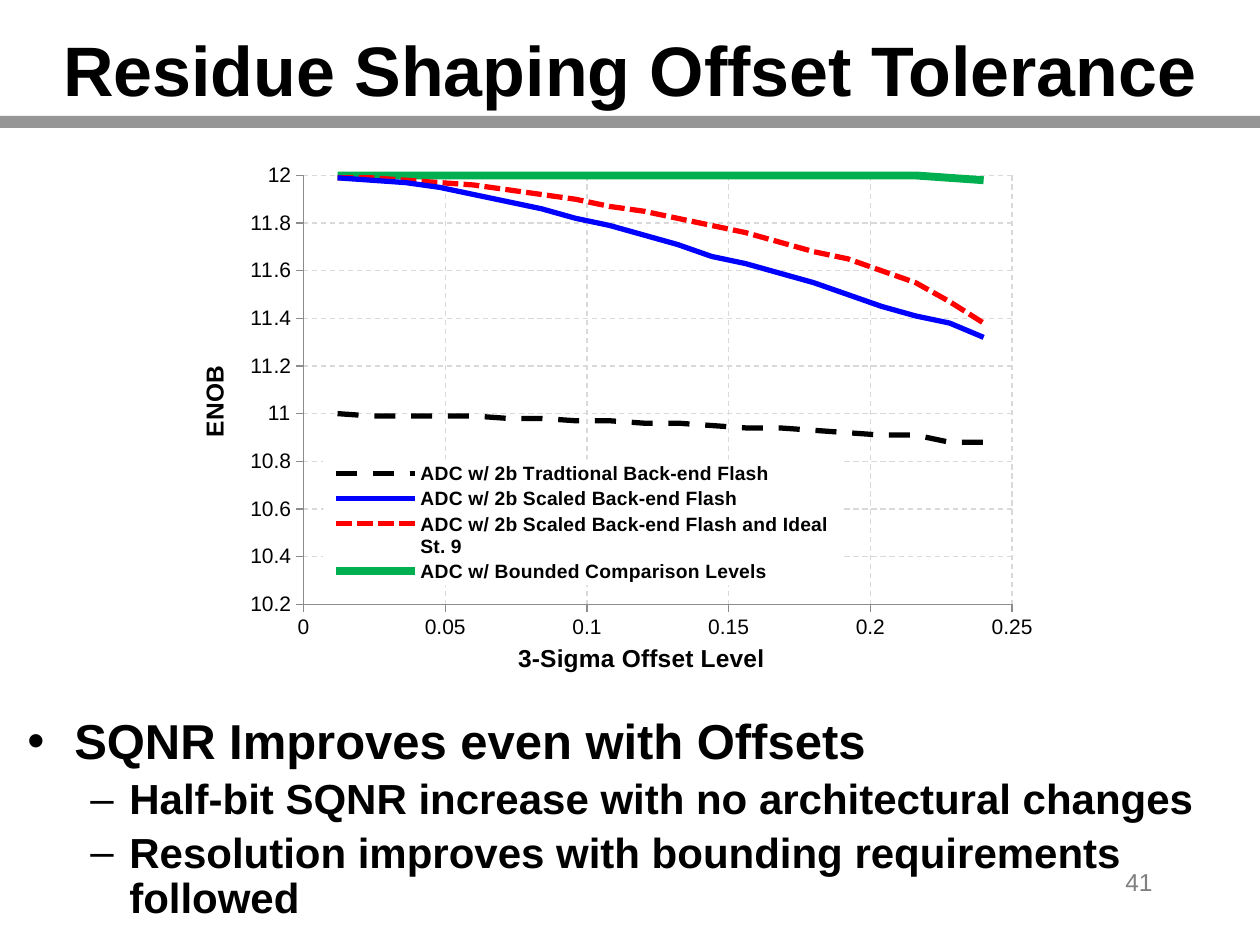
from dataclasses import dataclass

from lxml import etree
from pptx import Presentation
from pptx import util as u
from pptx.chart.data import XyChartData
from pptx.dml.color import RGBColor
from pptx.enum import chart as ch, dml, shapes, text
from pptx.oxml import parse_xml
from pptx.oxml.ns import nsdecls, qn

PX_PER_INCH = 126


@dataclass(frozen=True)
class Theme:
    font: str = "Arial"
    ink: str = "000000"
    paper: str = "FFFFFF"
    rule: str = "969696"
    number: str = "808080"
    axis: str = "8C8C8C"
    grid: str = "D9D9D9"
    title_size: float = 40
    point_size: float = 28
    subpoint_size: float = 24
    axis_title_size: float = 14
    number_size: float = 14
    tick_size: float = 12
    legend_size: float = 11


THEME = Theme()
DASH = dml.MSO_LINE.DASH
SHORT_DASH = dml.MSO_LINE.SQUARE_DOT

# Offsets run in equal steps of 0.012: name, colour, width, dash, ENOB values
OFFSET_STEP = 0.012
CURVES = [
    ("ADC w/ 2b Tradtional Back-end Flash", "000000", 3, DASH,
     [11, 10.99, 10.99, 10.99, 10.99, 10.98, 10.98, 10.97, 10.97, 10.96,
      10.96, 10.95, 10.94, 10.94, 10.93, 10.92, 10.91, 10.91, 10.88, 10.88]),
    ("ADC w/ 2b Scaled Back-end Flash", "0000FF", 3, None,
     [11.99, 11.98, 11.97, 11.95, 11.92, 11.89, 11.86, 11.82, 11.79, 11.75,
      11.71, 11.66, 11.63, 11.59, 11.55, 11.5, 11.45, 11.41, 11.38, 11.32]),
    ("ADC w/ 2b Scaled Back-end Flash and Ideal St. 9", "FF0000", 3, SHORT_DASH,
     [11.99, 11.99, 11.98, 11.97, 11.96, 11.94, 11.92, 11.9, 11.87, 11.85,
      11.82, 11.79, 11.76, 11.72, 11.68, 11.65, 11.6, 11.55, 11.47, 11.38]),
    ("ADC w/ Bounded Comparison Levels", "00B050", 4.5, None,
     [12] * 18 + [11.99, 11.98]),
]

# Text, level, bullet, size, left margin and hanging indent in px
POINTS = [
    ("SQNR Improves even with Offsets", 0, "•", THEME.point_size, 47, 47),
    ("Half-bit SQNR increase with no architectural changes",
     1, "–", THEME.subpoint_size, 102, 39),
    ("Resolution improves with bounding requirements followed",
     1, "–", THEME.subpoint_size, 102, 39),
]


def px(length):
    return u.Emu(round(length * 914400 / PX_PER_INCH))


def box(*lengths):
    return [px(length) for length in lengths]


def apply(target, values):
    for name, value in values.items():
        setattr(target, name, value)


def style_font(font, size, bold=False, color=THEME.ink):
    apply(font, {"name": THEME.font, "size": u.Pt(size), "bold": bold})
    font.color.rgb = RGBColor.from_string(color)


def style_line(line, color, width, dash=None):
    line.color.rgb = RGBColor.from_string(color)
    apply(line, {"width": u.Pt(width), "dash_style": dash})


def add_frame(slide, place, anchor=text.MSO_ANCHOR.TOP):
    frame = slide.shapes.add_textbox(*box(*place)).text_frame
    apply(frame, {"word_wrap": True, "vertical_anchor": anchor})
    return frame


def write(paragraph, words, align, size, bold=True, color=THEME.ink):
    paragraph.alignment = align
    run = paragraph.add_run()
    run.text = words
    style_font(run.font, size, bold, color)


def add_rule(slide, place):
    rule = slide.shapes.add_shape(shapes.MSO_SHAPE.RECTANGLE, *box(*place))
    rule.shadow.inherit = False
    rule.fill.solid()
    rule.fill.fore_color.rgb = RGBColor.from_string(THEME.rule)
    rule.line.fill.background()


def add_points(slide, place):
    frame = add_frame(slide, place)
    for index, (words, level, bullet, size, margin, hang) in enumerate(POINTS):
        paragraph = frame.add_paragraph() if index else frame.paragraphs[0]
        write(paragraph, words, text.PP_ALIGN.LEFT, size)
        apply(paragraph, {"level": level, "line_spacing": 0.9,
                          "space_before": u.Pt(0.2 * size)})
        props = paragraph._p.get_or_add_pPr()
        props.set("marL", str(px(margin)))
        props.set("indent", str(-px(hang)))
        etree.SubElement(props, qn("a:buFont")).set("typeface", THEME.font)
        etree.SubElement(props, qn("a:buChar")).set("char", bullet)


def manual_layout(x, y, w, h, inner=False):
    target = '<c:layoutTarget val="inner"/>' if inner else ""
    return parse_xml(
        f'<c:layout {nsdecls("c")}><c:manualLayout>{target}'
        '<c:xMode val="edge"/><c:yMode val="edge"/>'
        f'<c:x val="{x}"/><c:y val="{y}"/><c:w val="{w}"/><c:h val="{h}"/>'
        '</c:manualLayout></c:layout>')


def clear_layout(parent):
    for layout in parent.findall(qn("c:layout")):
        parent.remove(layout)


def style_axis(axis, title, low, high, step):
    apply(axis, {"minimum_scale": low, "maximum_scale": high,
                 "major_unit": step, "has_major_gridlines": True,
                 "major_tick_mark": ch.XL_TICK_MARK.OUTSIDE,
                 "minor_tick_mark": ch.XL_TICK_MARK.NONE,
                 "tick_label_position": ch.XL_TICK_LABEL_POSITION.LOW})
    apply(axis.tick_labels, {"number_format": "General",
                             "number_format_is_linked": False})
    style_font(axis.tick_labels.font, THEME.tick_size)
    style_line(axis.format.line, THEME.axis, 0.75)
    style_line(axis.major_gridlines.format.line, THEME.grid, 0.75, DASH)
    write(axis.axis_title.text_frame.paragraphs[0], title,
          text.PP_ALIGN.CENTER, THEME.axis_title_size)


def place_legend(chart):
    chart.has_legend = True
    legend = chart.legend
    apply(legend, {"position": ch.XL_LEGEND_POSITION.RIGHT,
                   "include_in_layout": False})
    style_font(legend.font, THEME.legend_size, True)
    node = legend._element
    clear_layout(node)
    node.find(qn("c:legendPos")).addnext(manual_layout(0.15, 0.58, 0.6, 0.24))
    # The white ground hides the grid behind the legend
    overlay = node.find(qn("c:overlay"))
    overlay.set("val", "1")
    overlay.addnext(parse_xml(
        f'<c:spPr {nsdecls("c", "a")}><a:solidFill>'
        f'<a:srgbClr val="{THEME.paper}"/></a:solidFill></c:spPr>'))


def add_enob_chart(slide, place):
    data = XyChartData()
    for name, _, _, _, levels in CURVES:
        curve = data.add_series(name)
        for step, enob in enumerate(levels, 1):
            curve.add_data_point(round(step * OFFSET_STEP, 3), enob)
    chart = slide.shapes.add_chart(
        ch.XL_CHART_TYPE.XY_SCATTER_SMOOTH_NO_MARKERS, *box(*place), data).chart
    chart.has_title = False
    style_font(chart.font, 10)
    chart.plots[0].vary_by_categories = False
    for series, (_, color, width, dash, _) in zip(chart.plots[0].series, CURVES):
        series.smooth = True
        series.marker.style = ch.XL_MARKER_STYLE.NONE
        style_line(series.format.line, color, width, dash)

    style_axis(chart.category_axis, "3-Sigma Offset Level", 0, 0.25, 0.05)
    style_axis(chart.value_axis, "ENOB", 10.2, 12, 0.2)
    upright = chart.value_axis.axis_title.text_frame._txBody.find(qn("a:bodyPr"))
    upright.set("rot", "-5400000")
    upright.set("vert", "horz")

    plot_area = chart._chartSpace.chart.plotArea
    clear_layout(plot_area)
    plot_area.insert(0, manual_layout(0.127, 0.039, 0.821, 0.817, inner=True))
    place_legend(chart)


def main():
    deck = Presentation()
    apply(deck, {"slide_width": px(1260), "slide_height": px(945)})
    slide = deck.slides.add_slide(deck.slide_layouts[6])

    # Heading and its rule
    add_rule(slide, (0, 116, 1260, 12))
    heading = add_frame(slide, (0, 16, 1260, 105), text.MSO_ANCHOR.MIDDLE)
    write(heading.paragraphs[0], "Residue Shaping Offset Tolerance",
          text.PP_ALIGN.CENTER, THEME.title_size)

    # Findings and page number
    add_points(slide, (15, 711, 1245, 208))
    page = add_frame(slide, (903, 861, 262, 63))
    write(page.paragraphs[0], "41", text.PP_ALIGN.RIGHT,
          THEME.number_size, False, THEME.number)

    # ENOB against offset
    add_enob_chart(slide, (194, 155, 863, 525))
    deck.save("out.pptx")


if __name__ == "__main__":
    main()
